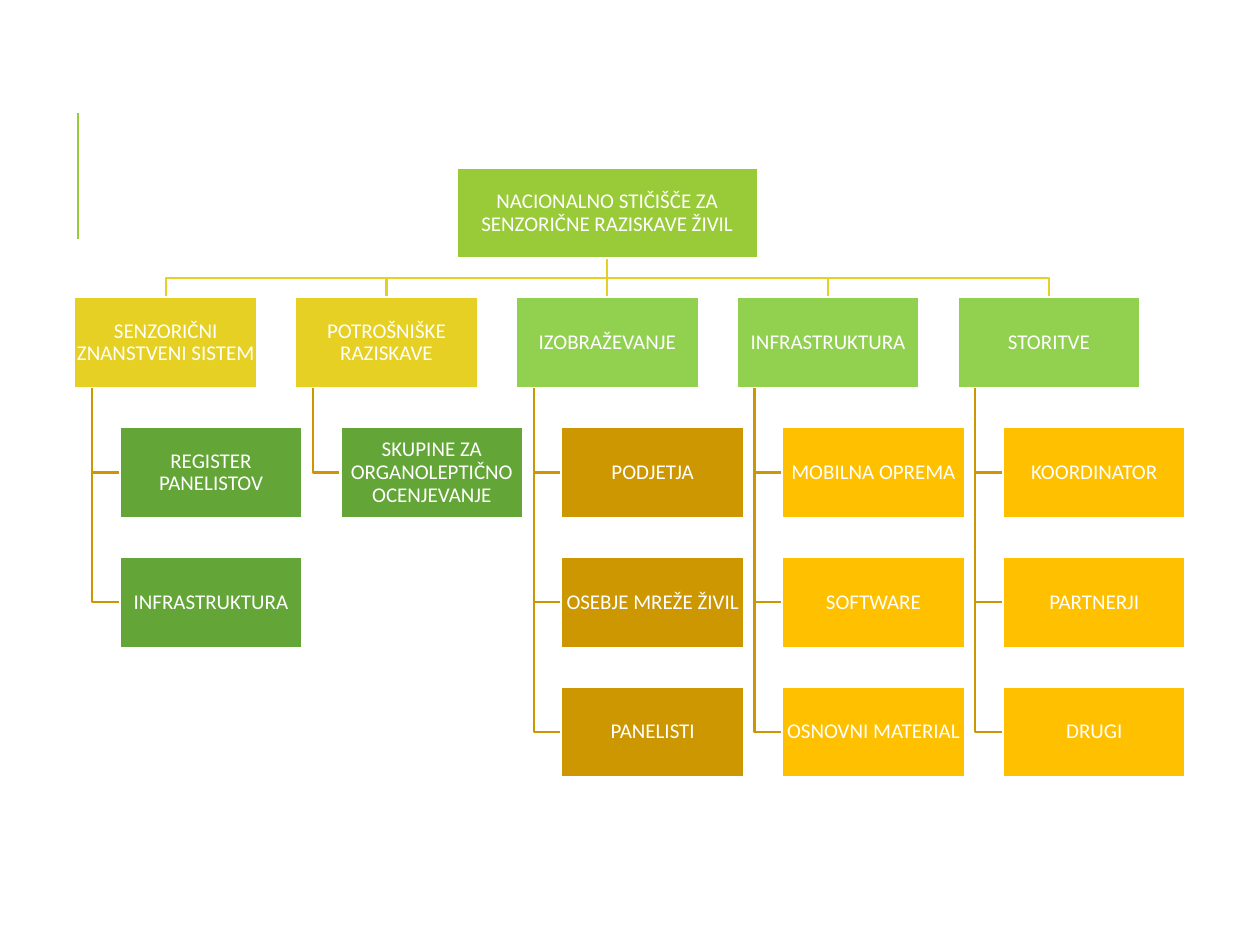
import pptx
import pptx.dml.color
import pptx.enum.shapes
import pptx.enum.text
import pptx.oxml.ns
import pptx.util
from lxml import etree

Inches = pptx.util.Inches
Pt = pptx.util.Pt
RGBColor = pptx.dml.color.RGBColor

WHITE = RGBColor(0xFF, 0xFF, 0xFF)
LIME = RGBColor(0x99, 0xCB, 0x38)
YELLOW = RGBColor(0xE6, 0xD0, 0x24)
LIGHT_GREEN = RGBColor(0x92, 0xD0, 0x50)
GREEN = RGBColor(0x63, 0xA5, 0x37)
OCHRE = RGBColor(0xCC, 0x97, 0x00)
AMBER = RGBColor(0xFF, 0xC0, 0x00)

BOX_WIDTH, BOX_HEIGHT = 1.45, 0.72
ROOT_WIDTH = 2.39
ROOT_TOP = 1.33
ROW_STEP = 1.03
BRANCH_TOP = ROOT_TOP + ROW_STEP
FIRST_LEFT, LAST_LEFT = 0.59, 7.6
LEAF_INDENT = 0.36
TRUNK_INDENT = 0.14

ROOT = "NACIONALNO STIČIŠČE ZA SENZORIČNE RAZISKAVE ŽIVIL"
BRANCHES = [
    ("SENZORIČNI ZNANSTVENI SISTEM", YELLOW, GREEN,
     ["REGISTER PANELISTOV", "INFRASTRUKTURA"]),
    ("POTROŠNIŠKE RAZISKAVE", YELLOW, GREEN,
     ["SKUPINE ZA ORGANOLEPTIČNO OCENJEVANJE"]),
    ("IZOBRAŽEVANJE", LIGHT_GREEN, OCHRE,
     ["PODJETJA", "OSEBJE MREŽE ŽIVIL", "PANELISTI"]),
    ("INFRASTRUKTURA", LIGHT_GREEN, AMBER,
     ["MOBILNA OPREMA", "SOFTWARE", "OSNOVNI MATERIAL"]),
    ("STORITVE", LIGHT_GREEN, AMBER,
     ["KOORDINATOR", "PARTNERJI", "DRUGI"]),
]
BRANCH_STEP = (LAST_LEFT - FIRST_LEFT) / (len(BRANCHES) - 1)
CENTRE = (FIRST_LEFT + LAST_LEFT + BOX_WIDTH) / 2


def add_box(slide, text, left, top, color, width=BOX_WIDTH):
    box = slide.shapes.add_shape(
        pptx.enum.shapes.MSO_SHAPE.RECTANGLE,
        Inches(left), Inches(top), Inches(width), Inches(BOX_HEIGHT))
    box.shadow.inherit = False
    box.fill.solid()
    box.fill.fore_color.rgb = color
    box.line.color.rgb = WHITE
    box.line.width = Pt(1.25)
    frame = box.text_frame
    frame.word_wrap = True
    frame.vertical_anchor = pptx.enum.text.MSO_ANCHOR.MIDDLE
    frame.margin_left = frame.margin_right = Inches(0.01)
    frame.margin_top = frame.margin_bottom = Inches(0.01)
    label = frame.paragraphs[0]
    label.text = text
    label.alignment = pptx.enum.text.PP_ALIGN.CENTER
    label.line_spacing = 0.9
    label.font.name = "Calibri"
    label.font.size = Pt(12)
    label.font.color.rgb = WHITE
    return box


def add_elbow(slide, points, color):
    start, *rest = [(Inches(x), Inches(y)) for x, y in points]
    builder = slide.shapes.build_freeform(*start)
    builder.add_line_segments(rest, close=False)
    elbow = builder.convert_to_shape()
    elbow.shadow.inherit = False
    elbow.fill.background()
    elbow.line.color.rgb = color
    elbow.line.width = Pt(1.25)


def add_straight(slide, x, top, bottom, color, weight):
    line = slide.shapes.add_connector(
        pptx.enum.shapes.MSO_CONNECTOR.STRAIGHT,
        Inches(x), Inches(top), Inches(x), Inches(bottom))
    line.line.color.rgb = color
    line.line.width = Pt(weight)
    etree.SubElement(line._element.spPr, pptx.oxml.ns.qn("a:effectLst"))
    return line


def add_branch_line(slide, left):
    root_bottom = ROOT_TOP + BOX_HEIGHT
    middle = (root_bottom + BRANCH_TOP) / 2
    branch_centre = left + BOX_WIDTH / 2
    add_elbow(slide, [(CENTRE, root_bottom), (CENTRE, middle),
                      (branch_centre, middle), (branch_centre, BRANCH_TOP)], YELLOW)


def add_leaf(slide, text, left, row, color):
    top = BRANCH_TOP + row * ROW_STEP
    trunk = left + TRUNK_INDENT
    leaf_left = left + LEAF_INDENT
    middle = top + BOX_HEIGHT / 2
    add_elbow(slide, [(trunk, BRANCH_TOP + BOX_HEIGHT), (trunk, middle),
                      (leaf_left, middle)], OCHRE)
    add_box(slide, text, leaf_left, top, color)


def main():
    deck = pptx.Presentation()
    deck.slide_width, deck.slide_height = Inches(10), Inches(7.5)
    slide = deck.slides.add_slide(deck.slide_layouts[6])

    add_straight(slide, 0.62, 1.9, 0.9, LIME, 1.5)
    centre_index = len(BRANCHES) // 2
    lefts = [FIRST_LEFT + i * BRANCH_STEP for i in range(len(BRANCHES))]
    for i, left in enumerate(lefts):
        if i != centre_index:
            add_branch_line(slide, left)
    centre_line = add_straight(
        slide, CENTRE, ROOT_TOP + BOX_HEIGHT, BRANCH_TOP, YELLOW, 1.25)

    root = add_box(slide, ROOT, CENTRE - ROOT_WIDTH / 2, ROOT_TOP, LIME, ROOT_WIDTH)
    branch_boxes = []
    for left, (title, color, leaf_color, leaves) in zip(lefts, BRANCHES):
        branch_boxes.append(add_box(slide, title, left, BRANCH_TOP, color))
        for row, leaf in enumerate(leaves, start=1):
            add_leaf(slide, leaf, left, row, leaf_color)
    centre_line.begin_connect(root, 2)
    centre_line.end_connect(branch_boxes[centre_index], 0)

    deck.save("out.pptx")


if __name__ == "__main__":
    main()
